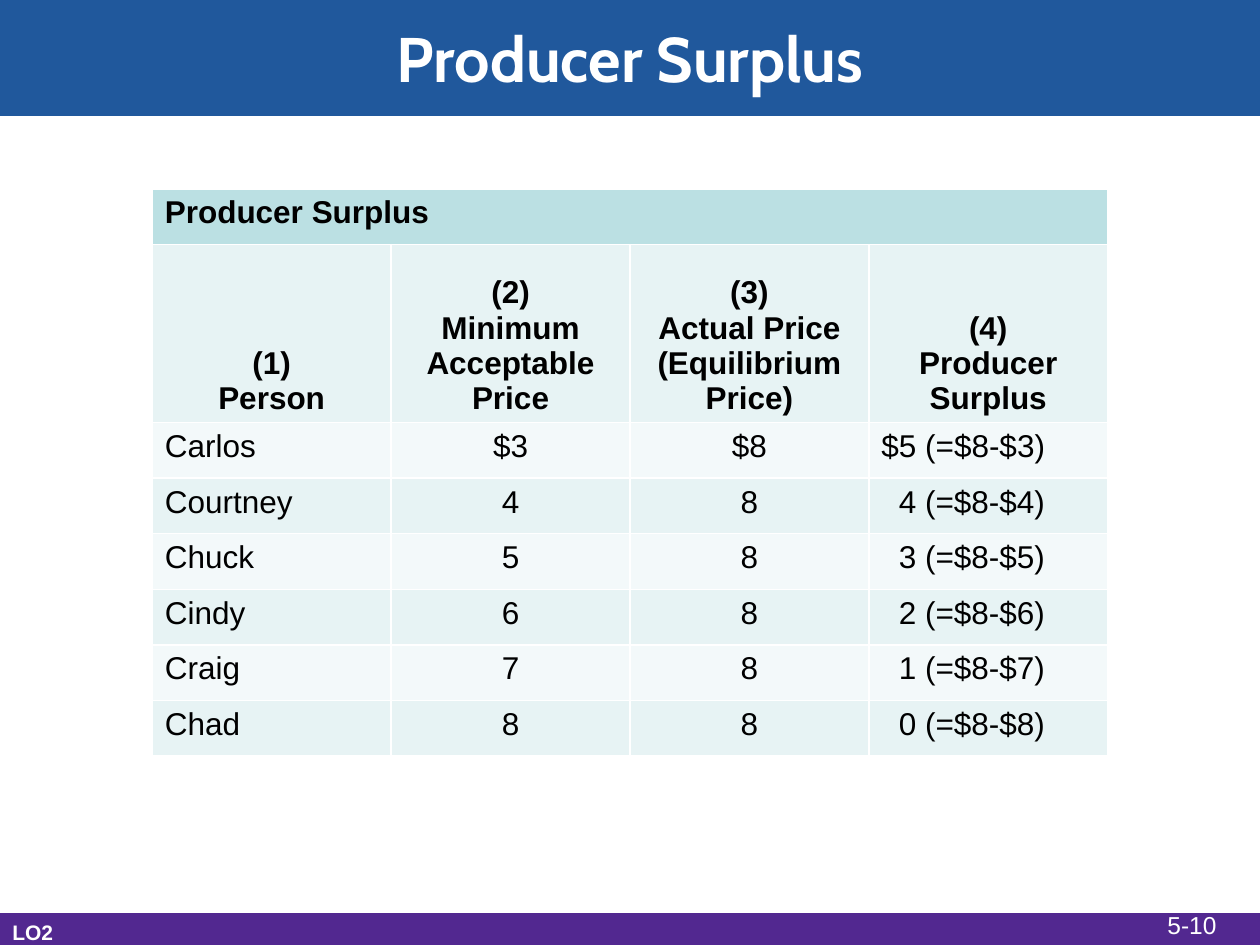
from pptx import Presentation
from pptx.dml.color import RGBColor
from pptx.enum.shapes import MSO_SHAPE as Shape
from pptx.enum.text import MSO_ANCHOR as Anchor, PP_ALIGN as Align
from pptx.util import Pt

WHITE = RGBColor(0xFF, 0xFF, 0xFF)
BLACK = RGBColor(0x00, 0x00, 0x00)
BLUE = RGBColor(0x20, 0x58, 0x9C)
PURPLE = RGBColor(0x52, 0x28, 0x90)
TEAL = RGBColor(0xBB, 0xE0, 0xE3)
BAND_DARK = RGBColor(0xE7, 0xF3, 0xF4)
BAND_LIGHT = RGBColor(0xF3, 0xF9, 0xFA)


def write(frame, text, size=18, color=BLACK, bold=False, align=Align.LEFT, font="Arial"):
    """Fill a text frame, one paragraph for each line of text."""
    for index, line in enumerate(text.split("\n")):
        para = frame.add_paragraph() if index else frame.paragraphs[0]
        para.alignment = align
        span = para.add_run()
        span.text = line
        span.font.name = font
        span.font.size = Pt(size)
        span.font.bold = bold
        span.font.color.rgb = color


deck = Presentation()
deck.slide_width, deck.slide_height = Pt(720), Pt(540)
page = deck.slides.add_slide(deck.slide_layouts[6])

# Title and footer bands
for top, height, color in [(0, 66, BLUE), (522, 18, PURPLE)]:
    band = page.shapes.add_shape(Shape.RECTANGLE, Pt(0), Pt(top), Pt(720), Pt(height))
    band.shadow.inherit = False
    band.fill.solid()
    band.fill.fore_color.rgb = color
    band.line.color.rgb = color
    band.line.width = Pt(0.75)

# Title, learning objective and page number
labels = [
    ("Producer Surplus", (0, 0, 720, 66), True,
     dict(size=36, bold=True, align=Align.CENTER, font="Cabin")),
    ("LO2", (0, 522, 38, 21.5), False, dict(size=12, bold=True)),
    ("5-10", (660, 516.5, 42.5, 24), False, dict(size=14)),
]
for text, bounds, wrap, style in labels:
    box = page.shapes.add_textbox(*map(Pt, bounds))
    box.text_frame.word_wrap = wrap
    box.text_frame.vertical_anchor = Anchor.MIDDLE if wrap else Anchor.TOP
    write(box.text_frame, text, color=WHITE, **style)

# Table: a merged heading, column heads, then one row per producer
heads = ["(1)\nPerson", "(2)\nMinimum Acceptable Price",
         "(3)\nActual Price (Equilibrium Price)", "(4)\nProducer Surplus"]
producers = [
    ("Carlos", "$3", "$8", "$5 (=$8-$3)"),
    ("Courtney", "4", "8", "4 (=$8-$4)"),
    ("Chuck", "5", "8", "3 (=$8-$5)"),
    ("Cindy", "6", "8", "2 (=$8-$6)"),
    ("Craig", "7", "8", "1 (=$8-$7)"),
    ("Chad", "8", "8", "0 (=$8-$8)"),
]
rows = [["Producer Surplus", "", "", ""], heads, *producers]
table = page.shapes.add_table(len(rows), 4, Pt(87), Pt(108), Pt(546), Pt(324)).table
for row in table.rows:
    row.height = Pt(31.75)
table.rows[1].height = Pt(101.75)
table.cell(0, 0).merge(table.cell(0, 3))

for r, values in enumerate(rows):
    for c, value in enumerate(values):
        cell = table.cell(r, c)
        cell.fill.solid()
        cell.fill.fore_color.rgb = TEAL if r == 0 else BAND_DARK if r % 2 else BAND_LIGHT
        if r == 1:
            cell.vertical_anchor = Anchor.BOTTOM
        if c == 3 and r > 2:
            cell.margin_left = Pt(17.2)  # lines the digits up below "$5"
        centered = r == 1 or (r > 1 and c in (1, 2))
        if value:
            write(cell.text_frame, value, bold=r < 2,
                  align=Align.CENTER if centered else Align.LEFT)

deck.save("out.pptx")
